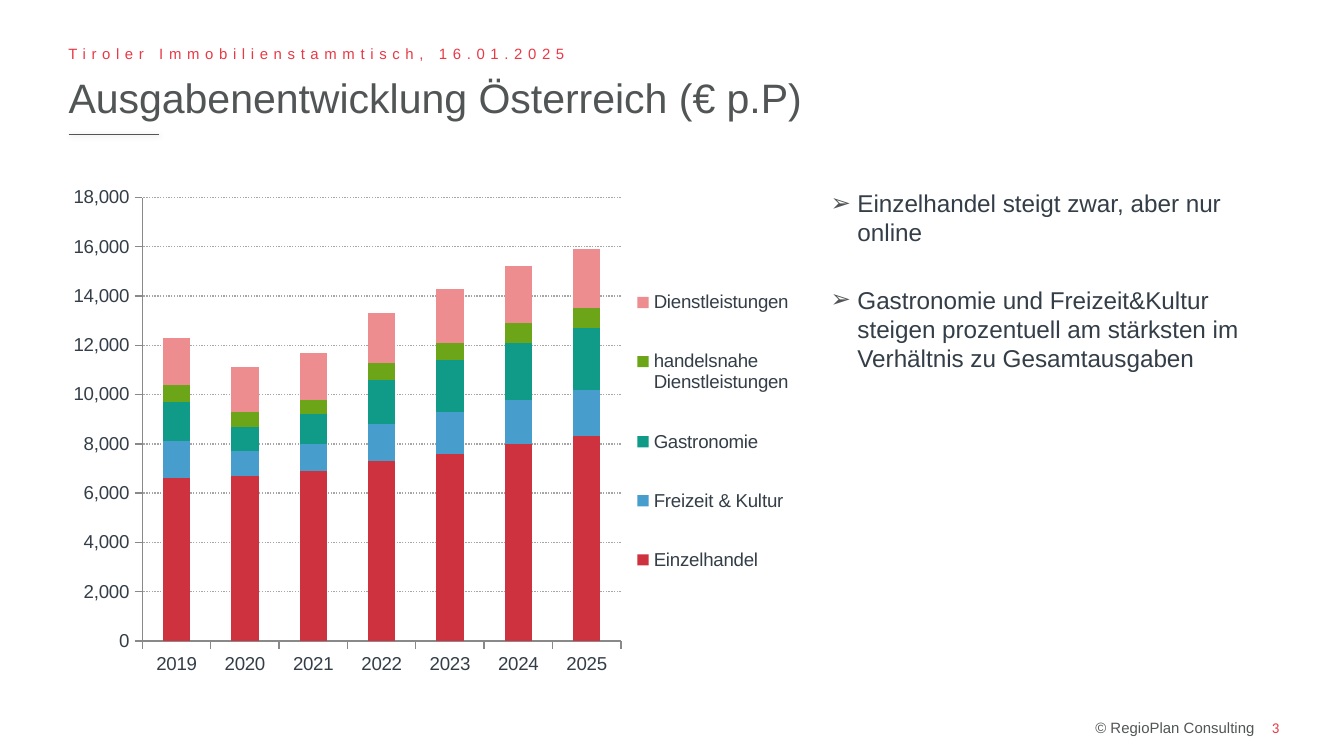
from typing import NamedTuple

from lxml.etree import SubElement
from pptx import Presentation
from pptx.chart.data import CategoryChartData
from pptx.dml.color import RGBColor
from pptx.enum.chart import XL_CHART_TYPE, XL_LEGEND_POSITION, XL_TICK_MARK
from pptx.enum.dml import MSO_LINE
from pptx.enum.shapes import MSO_CONNECTOR
from pptx.enum.text import MSO_ANCHOR, MSO_AUTO_SIZE, PP_ALIGN
from pptx.oxml import parse_xml
from pptx.oxml.ns import nsdecls, qn
from pptx.util import Inches, Pt

COLORS = {
    "grey": "525556", "ink": "343E48", "accent": "E83946",
    "grid": "A6A6A6", "axis": "898989", "red": "CE323E",
    "blue": "479DCB", "teal": "0F9B88", "green": "6CA517", "pink": "EE8D90",
}


class Sector(NamedTuple):
    name: str
    color: str
    values: tuple[int, ...]


class Box(NamedTuple):
    left: float
    top: float
    width: float
    height: float


YEARS = [str(year) for year in range(2019, 2026)]
SECTORS = [
    Sector("Einzelhandel", "red", (6600, 6700, 6900, 7300, 7600, 8000, 8300)),
    Sector("Freizeit & Kultur", "blue", (1500, 1000, 1100, 1500, 1700, 1800, 1900)),
    Sector("Gastronomie", "teal", (1600, 1000, 1200, 1800, 2100, 2300, 2500)),
    Sector("handelsnahe Dienstleistungen", "green", (700, 600, 600, 700, 700, 800, 800)),
    Sector("Dienstleistungen", "pink", (1900, 1800, 1900, 2000, 2200, 2300, 2400)),
]
POINTS = [
    "Einzelhandel steigt zwar, aber nur online",
    "Gastronomie und Freizeit&Kultur steigen prozentuell am stärksten im "
    "Verhältnis zu Gesamtausgaben",
]


def tint(name: str) -> RGBColor:
    return RGBColor.from_string(COLORS[name])


def style(font, size: float, color: str, face: str = "Arial") -> None:
    font.size, font.name = Pt(size), face
    font.color.rgb = tint(color)


def add_bullet(para) -> None:
    props = para._p.get_or_add_pPr()
    props.set("marL", str(Inches(0.2)))
    props.set("indent", str(-Inches(0.2)))
    color = SubElement(props, qn("a:buClr"))
    SubElement(color, qn("a:srgbClr"), val=COLORS["grey"])
    SubElement(props, qn("a:buFont"), typeface="Arial")
    SubElement(props, qn("a:buChar"), char="➢")


def write(shape, box: Box, *lines: str, size: float, color: str,
          face: str = "Arial", align=PP_ALIGN.LEFT, anchor=MSO_ANCHOR.MIDDLE,
          wrap: bool = True, bullet: bool = False, gap: float = 0,
          track: float = 0) -> None:
    """Place a text shape and fill it, one paragraph per line of text."""
    shape.left, shape.top, shape.width, shape.height = map(Inches, box)
    frame = shape.text_frame
    frame.auto_size, frame.word_wrap = MSO_AUTO_SIZE.NONE, wrap
    frame.vertical_anchor = anchor
    frame.margin_left = frame.margin_right = 0
    frame.margin_top = frame.margin_bottom = 0
    for i, line in enumerate(lines):
        para = frame.add_paragraph() if i else frame.paragraphs[0]
        para.alignment = align
        para.space_before = Pt(gap if i else 0)
        if bullet:
            add_bullet(para)
        run = para.add_run()
        run.text = line
        style(run.font, size, color, face)
        if track:
            run._r.get_or_add_rPr().set("spc", str(int(track * 100)))


def add_rule(slide) -> None:
    """Draw the short line below the title with its soft shadow."""
    rule = slide.shapes.add_connector(
        MSO_CONNECTOR.STRAIGHT, Inches(0.51), Inches(1), Inches(1.18), Inches(1))
    rule.line.color.rgb, rule.line.width = tint("grey"), Pt(0.75)
    rule._element.spPr.append(parse_xml(
        f'<a:effectLst {nsdecls("a")}>'
        f'<a:outerShdw blurRad="{Pt(3)}" dist="{Pt(1)}" dir="2700000">'
        '<a:srgbClr val="000000"><a:alpha val="15000"/></a:srgbClr>'
        '</a:outerShdw></a:effectLst>'))


def set_layout(part, box: Box, whole: Box, inner: bool = False) -> None:
    """Fix a chart part's place, in inches from the corner of the whole chart."""
    old = part.find(qn("c:layout"))
    if old is not None:
        part.remove(old)
    target = '<c:layoutTarget val="inner"/>' if inner else ""
    layout = parse_xml(
        f'<c:layout {nsdecls("c")}><c:manualLayout>{target}'
        '<c:xMode val="edge"/><c:yMode val="edge"/>'
        f'<c:x val="{box.left / whole.width}"/>'
        f'<c:y val="{box.top / whole.height}"/>'
        f'<c:w val="{box.width / whole.width}"/>'
        f'<c:h val="{box.height / whole.height}"/>'
        '</c:manualLayout></c:layout>')
    if inner:
        part.insert(0, layout)
    else:
        part.find(qn("c:legendPos")).addnext(layout)


def add_spending(slide, box: Box) -> None:
    data = CategoryChartData(number_format="#,##0")
    data.categories = YEARS
    for sector in SECTORS:
        data.add_series(sector.name, sector.values)
    chart = slide.shapes.add_chart(
        XL_CHART_TYPE.COLUMN_STACKED, *map(Inches, box), data).chart
    style(chart.font, 10, "ink", "Calibri")
    chart.has_title = False
    plot = chart.plots[0]
    plot.gap_width, plot.overlap = 150, 100
    plot.vary_by_categories = False
    for series, sector in zip(plot.series, SECTORS):
        series.format.fill.solid()
        series.format.fill.fore_color.rgb = tint(sector.color)

    for axis in (chart.category_axis, chart.value_axis):
        style(axis.tick_labels.font, 10, "ink")
        axis.major_tick_mark = XL_TICK_MARK.OUTSIDE
        axis.minor_tick_mark = XL_TICK_MARK.NONE
        axis.format.line.color.rgb = tint("axis")
    scale = chart.value_axis
    scale.minimum_scale, scale.maximum_scale, scale.major_unit = 0, 18000, 2000
    scale.tick_labels.number_format = "#,##0"
    scale.tick_labels.number_format_is_linked = False
    scale.has_major_gridlines = True
    grid = scale.major_gridlines.format.line
    grid.color.rgb, grid.width = tint("grid"), Pt(0.75)
    grid.dash_style = MSO_LINE.ROUND_DOT

    chart.has_legend = True
    legend = chart.legend
    legend.position = XL_LEGEND_POSITION.RIGHT
    legend.include_in_layout = False
    style(legend.font, 10, "ink")
    area = chart._chartSpace.chart.plotArea
    set_layout(area, Box(0.63, 0.15, 3.56, 3.3), box, inner=True)
    set_layout(legend._element, Box(4.23, 0.57, 1.29, 2.64), box)


def main() -> None:
    deck = Presentation()
    deck.slide_width = Inches(10)
    deck.slide_height = deck.slide_width * 9 // 16
    slide = deck.slides.add_slide(deck.slide_layouts[5])

    def text(box: Box, *lines: str, **form) -> None:
        write(slide.shapes.add_textbox(0, 0, 0, 0), box, *lines, **form)

    write(slide.shapes.title, Box(0.51, 0.53, 8.27, 0.39),
          "Ausgabenentwicklung Österreich (€ p.P)", size=22, color="grey")
    text(Box(0.51, 0.29, 8.27, 0.21), "Tiroler Immobilienstammtisch, 16.01.2025",
         size=8, color="accent", track=3)
    add_rule(slide)
    add_spending(slide, Box(0.43, 1.32, 5.59, 3.78))
    text(Box(6.18, 1.4, 3.39, 3.78), *POINTS, size=13, color="ink",
         anchor=MSO_ANCHOR.TOP, bullet=True, gap=20.5)
    text(Box(8.15, 5.27, 1.26, 0.28), "© RegioPlan Consulting",
         size=8, color="grey", wrap=False)
    text(Box(9.07, 5.27, 0.45, 0.28), "3", size=8, color="accent",
         face="Calibri", align=PP_ALIGN.RIGHT, wrap=False)
    deck.save("out.pptx")


if __name__ == "__main__":
    main()
